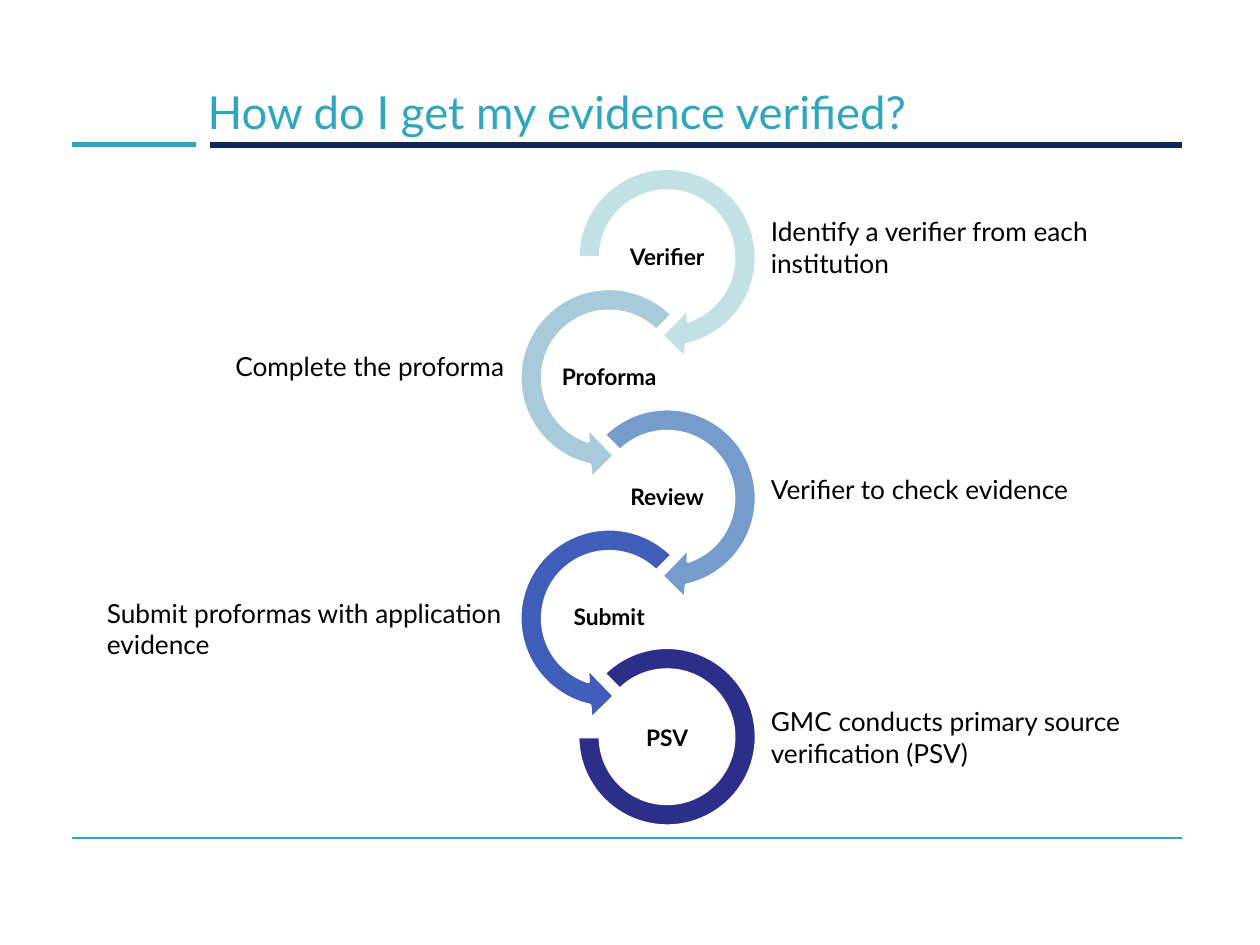
from pptx import Presentation
from pptx.dml.color import RGBColor
from pptx.enum.shapes import MSO_CONNECTOR, MSO_SHAPE
from pptx.enum.text import MSO_ANCHOR, MSO_AUTO_SIZE, PP_ALIGN
from pptx.oxml.ns import qn
from pptx.util import Pt
from lxml import etree

STRAIGHT = MSO_CONNECTOR.STRAIGHT
RIGHT_ARROW, LEFT_ARROW = MSO_SHAPE.CIRCULAR_ARROW, MSO_SHAPE.LEFT_CIRCULAR_ARROW
ARC = MSO_SHAPE.BLOCK_ARC
TOP, MIDDLE = MSO_ANCHOR.TOP, MSO_ANCHOR.MIDDLE
LEFT, CENTER = PP_ALIGN.LEFT, PP_ALIGN.CENTER
GROW, FIXED = MSO_AUTO_SIZE.SHAPE_TO_FIT_TEXT, MSO_AUTO_SIZE.NONE

COLORS = {
    "navy": "0E285E", "teal": "30A5BE", "text": "000000", "edge": "FFFFFF",
    "verifier": "C2E1E4", "proforma": "A8CBDC", "review": "759CCB",
    "submit": "415DBA", "psv": "2D2D8A",
}
PITCH, ARROW_SIZE, ARC_SIZE = 68.7, 118.8, 102.2
RIGHT_X, LEFT_X, FIRST_Y = 321.8, 288.7, 87.8
LABEL_WIDTH, LABEL_HEIGHT = 66, 33

STEPS = [
    ("Verifier", RIGHT_ARROW, RIGHT_X, (0.11, 11.423, 45, 108, 0.125)),
    ("Proforma", LEFT_ARROW, LEFT_X, (0.11, 11.423, 63, 189, 0.125)),
    ("Review", RIGHT_ARROW, RIGHT_X, (0.11, 11.423, 45, 135, 0.125)),
    ("Submit", LEFT_ARROW, LEFT_X, (0.11, 11.423, 63, 189, 0.125)),
    ("PSV", ARC, RIGHT_X, (135, 108, 0.127)),
]
NOTES = [
    ("Identify a verifier from each institution", 433.4, 119.5, 250.6, 44),
    ("Complete the proforma", 127.4, 196.6, 175.7, 25.2),
    ("Verifier to check evidence", 433.4, 267.1, 250.6, 25.2),
    ("Submit proformas with application evidence", 54, 337.7, 250.6, 44),
    ("GMC conducts primary source verification (PSV)", 433.4, 399.6, 250.6, 44),
]


class SlideBuilder:
    """Holds the style and the current slide, and draws each kind of element."""

    font = "Lato"

    def __init__(self, slide):
        self.slide = slide

    def color(self, name):
        return RGBColor.from_string(COLORS[name])

    def rule(self, x1, y1, x2, y2, color, width):
        line = self.slide.shapes.add_connector(STRAIGHT, Pt(x1), Pt(y1), Pt(x2), Pt(y2))
        line.line.color.rgb = self.color(color)
        line.line.width = Pt(width)
        etree.SubElement(line._element.spPr, qn("a:effectLst"))

    def ring(self, kind, x, y, size, color, adjustments):
        shape = self.slide.shapes.add_shape(kind, Pt(x), Pt(y), Pt(size), Pt(size))
        shape.shadow.inherit = False
        for index, value in enumerate(adjustments):
            shape.adjustments[index] = value
        shape.fill.solid()
        shape.fill.fore_color.rgb = self.color(color)
        shape.line.color.rgb = self.color("edge")
        shape.line.width = Pt(2)

    def text(self, words, x, y, width, height, size, color="text", bold=False,
             frame_format=None, para_format=None):
        box = self.slide.shapes.add_textbox(Pt(x), Pt(y), Pt(width), Pt(height))
        frame = box.text_frame
        para = frame.paragraphs[0]
        span = para.add_run()
        span.text = words
        formats = [
            (frame, {"word_wrap": True, **(frame_format or {})}),
            (para, para_format or {"alignment": LEFT}),
            (span.font, {"name": self.font, "size": Pt(size), "bold": bold}),
        ]
        for target, values in formats:
            for name, value in values.items():
                setattr(target, name, value)
        span.font.color.rgb = self.color(color)

    def title(self, words, x, y, width, height):
        self.text(words, x, y, width, height, 26, "teal",
                  frame_format={"vertical_anchor": MIDDLE, "auto_size": FIXED})

    def label(self, words, x, y):
        sides = ("left", "top", "right", "bottom")
        insets = {f"margin_{side}": Pt(0.8) for side in sides}
        self.text(words, x, y, LABEL_WIDTH, LABEL_HEIGHT, 13, bold=True,
                  frame_format={"vertical_anchor": MIDDLE, "auto_size": FIXED, **insets},
                  para_format={"alignment": CENTER, "line_spacing": 0.9,
                               "space_after": Pt(4.55)})

    def note(self, words, x, y, width, height):
        self.text(words, x, y, width, height, 15,
                  frame_format={"vertical_anchor": TOP, "auto_size": GROW})


def main():
    deck = Presentation()
    deck.slide_width, deck.slide_height = Pt(720), Pt(540)
    page = SlideBuilder(deck.slides.add_slide(deck.slide_layouts[6]))

    page.rule(120.2, 82.8, 675.4, 82.8, "navy", 3)
    page.rule(41, 82.5, 112.3, 82.5, "teal", 3)
    page.rule(41, 478.8, 675.4, 478.8, "teal", 0.75)
    page.title("How do I get my evidence verified?", 111.6, 37.4, 563.8, 52.6)

    for index, (name, kind, x, adjustments) in enumerate(STEPS):
        y = FIRST_Y + index * PITCH
        size = ARC_SIZE if kind == ARC else ARROW_SIZE
        inset = (ARROW_SIZE - size) / 2
        page.ring(kind, x + inset, y + inset - (1 if kind == ARC else 0), size,
                  name.lower(), adjustments)
        page.label(name, x + (ARROW_SIZE - LABEL_WIDTH) / 2, y + 43)

    for note in NOTES:
        page.note(*note)

    deck.save("out.pptx")


if __name__ == "__main__":
    main()
